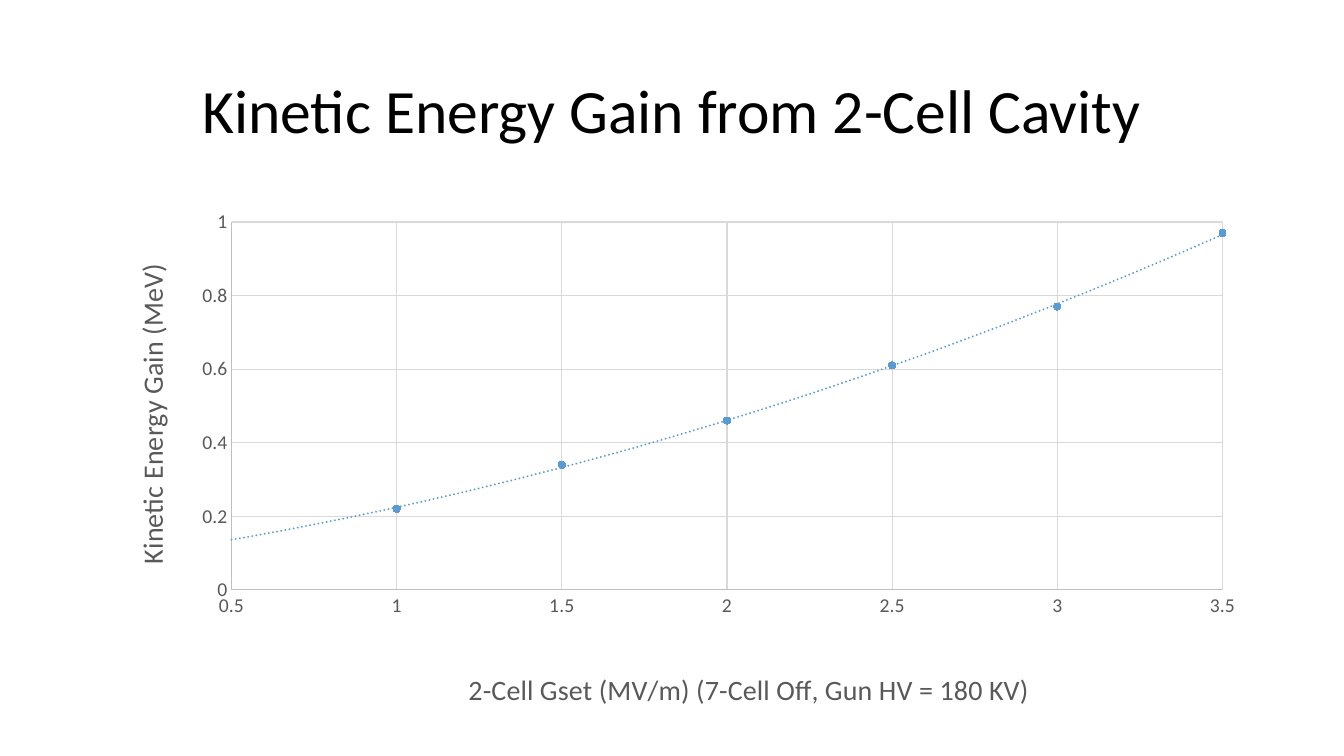
from pptx import Presentation
from pptx.chart.data import XyChartData
from pptx.dml.color import RGBColor
from pptx.enum.chart import XL_CHART_TYPE as ChartType, XL_MARKER_STYLE as MarkerStyle
from pptx.enum.chart import XL_TICK_MARK as TickMark
from pptx.enum.text import MSO_ANCHOR as Anchor, PP_ALIGN as Align
from pptx.oxml import parse_xml
from pptx.oxml.ns import nsdecls, qn
from pptx.util import Cm, Pt

FONT = "Calibri"
BLUE = "5B9BD5"
GREY = "595959"


def color(hex_code):
    return RGBColor.from_string(hex_code)


def place(part, position, content):
    """Give a chart part a manual layout, as the child at the given position."""
    for old_layout in part.findall(qn("c:layout")):
        part.remove(old_layout)
    part.insert(position, parse_xml(
        f'<c:layout {nsdecls("c")}><c:manualLayout>{content}</c:manualLayout></c:layout>'))


prs = Presentation()
prs.slide_width, prs.slide_height = Cm(33.87), Cm(19.05)
slide = prs.slides.add_slide(prs.slide_layouts[6])

# Heading
heading = slide.shapes.add_textbox(Cm(2.33), Cm(1.01), Cm(29.21), Cm(3.68)).text_frame
heading.word_wrap = True
heading.vertical_anchor = Anchor.MIDDLE
line = heading.paragraphs[0]
line.alignment = Align.CENTER
line.line_spacing = 0.9
run = line.add_run()
run.text = "Kinetic Energy Gain from 2-Cell Cavity"
run.font.name, run.font.size = FONT, Pt(44)
run.font.color.rgb = color("000000")

# Energy gain by gradient
gradients = [1, 1.5, 2, 2.5, 3, 3.5]
gains = [0.22, 0.34, 0.46, 0.61, 0.77, 0.97]
data = XyChartData()
points = data.add_series("Series 1")
for gradient, gain in zip(gradients, gains):
    points.add_data_point(gradient, gain)
chart = slide.shapes.add_chart(
    ChartType.XY_SCATTER, Cm(2.33), Cm(5.07), Cm(29.21), Cm(13.13), data).chart
chart.has_legend = False
chart.has_title = False
chart.font.name, chart.font.size = FONT, Pt(10)
plot = chart.plots[0]
plot.vary_by_categories = False
place(chart.element.find(".//" + qn("c:plotArea")), 0,
      '<c:layoutTarget val="inner"/><c:xMode val="edge"/><c:yMode val="edge"/>'
      '<c:x val="0.12"/><c:y val="0.04"/><c:w val="0.855"/><c:h val="0.706"/>')

# Axes: title, minimum, maximum, step, title position
axes = [
    (chart.category_axis, "2-Cell Gset (MV/m) (7-Cell Off, Gun HV = 180 KV)",
     0.5, 3.5, 0.5, 0.32, 0.89),
    (chart.value_axis, "Kinetic Energy Gain (MeV)", 0, 1, 0.2, 0.03, 0.11),
]
for axis, caption, low, high, step, left, top in axes:
    axis.minimum_scale, axis.maximum_scale, axis.major_unit = low, high, step
    axis.major_tick_mark = axis.minor_tick_mark = TickMark.NONE
    axis.has_major_gridlines = True
    for rule, shade in ((axis.major_gridlines.format.line, "D9D9D9"),
                        (axis.format.line, "BFBFBF")):
        rule.color.rgb = color(shade)
        rule.width = Pt(0.75)
    labels = axis.tick_labels
    labels.number_format, labels.number_format_is_linked = "General", False
    run = axis.axis_title.text_frame.paragraphs[0].add_run()
    run.text = caption
    for font, size in ((labels.font, 14), (run.font, 20)):
        font.name, font.size, font.bold = FONT, Pt(size), False
        font.color.rgb = color(GREY)
    place(axis.axis_title._element, 1,
          '<c:xMode val="edge"/><c:yMode val="edge"/>'
          f'<c:x val="{left}"/><c:y val="{top}"/>')

# Measured points and their quadratic trend, extended back to 0.5 MV/m
series = plot.series[0]
series.format.line.fill.background()
series.marker.style, series.marker.size = MarkerStyle.CIRCLE, 5
series.marker.format.fill.solid()
series.marker.format.fill.fore_color.rgb = color(BLUE)
series.marker.format.line.color.rgb = color(BLUE)
trend = parse_xml(
    f'<c:trendline {nsdecls("c", "a")}><c:spPr><a:ln w="{Pt(1.5)}" cap="rnd">'
    f'<a:solidFill><a:srgbClr val="{BLUE}"/></a:solidFill><a:prstDash val="sysDot"/></a:ln></c:spPr>'
    '<c:trendlineType val="poly"/><c:order val="2"/><c:backward val="0.5"/>'
    '<c:dispRSqr val="0"/><c:dispEq val="0"/></c:trendline>')
series._element.find(qn("c:xVal")).addprevious(trend)

prs.save("out.pptx")
